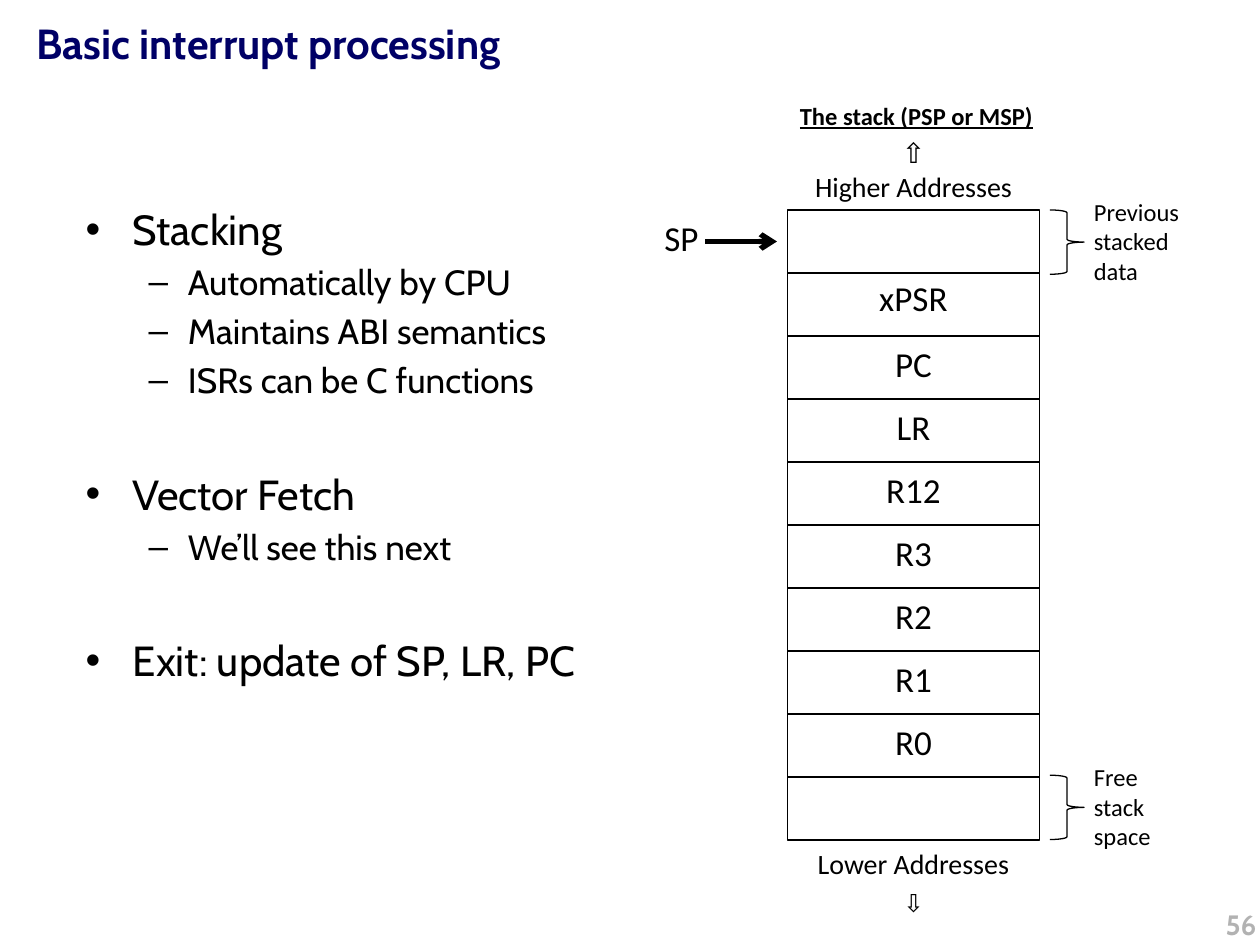
from lxml.etree import SubElement
from pptx import Presentation
from pptx.dml.color import RGBColor
from pptx.enum.shapes import MSO_CONNECTOR, MSO_SHAPE
from pptx.enum.text import MSO_ANCHOR, PP_ALIGN
from pptx.oxml.ns import qn
from pptx.util import Pt

BLACK = RGBColor(0x00, 0x00, 0x00)
WHITE = RGBColor(0xFF, 0xFF, 0xFF)
NAVY = RGBColor(0x00, 0x00, 0x66)
GREY = RGBColor(0xB2, 0xB2, 0xB2)

# Stack geometry, in points
STACK_LEFT, STACK_TOP = 450, 120
CELL_WIDTH, CELL_HEIGHT = 144, 36
STACK_CENTRE = STACK_LEFT + CELL_WIDTH / 2
REGISTERS = ["xPSR", "PC", "LR", "R12", "R3", "R2", "R1", "R0"]
CELL_COUNT = len(REGISTERS) + 2  # previous data above, free space below

# Bullet levels: character, left margin, hanging indent, size, space before
LEVELS = [("•", 27, -27, 24, 38.4), ("–", 58.5, -22.5, 20, 4)]
OUTLINE = [
    (0, "Stacking"),
    (1, "Automatically by CPU"),
    (1, "Maintains ABI semantics"),
    (1, "ISRs can be C functions"),
    (0, "Vector Fetch"),
    (1, "We’ll see this next"),
    (0, "Exit: update of SP, LR, PC"),
]


def format_font(font, color=BLACK, **values):
    for name, value in values.items():
        setattr(font, name, value)
    font.color.rgb = color


def add_text(slide, box, lines, size, name="Calibri", align=PP_ALIGN.LEFT,
             wrap=False, **font_values):
    shape = slide.shapes.add_textbox(*map(Pt, box))
    frame = shape.text_frame
    frame.word_wrap = wrap
    frame.text = "\n".join(lines)
    for paragraph in frame.paragraphs:
        paragraph.alignment = align
        format_font(paragraph.font, size=Pt(size), name=name, **font_values)
    return shape


def add_centred(slide, top, width, height, lines, size, **values):
    box = (STACK_CENTRE - width / 2, top, width, height)
    return add_text(slide, box, lines, size, align=PP_ALIGN.CENTER, **values)


def add_outlined(slide, kind, box):
    shape = slide.shapes.add_shape(kind, *map(Pt, box))
    shape.shadow.inherit = False
    shape.fill.solid()
    shape.fill.fore_color.rgb = WHITE
    shape.line.color.rgb = BLACK
    shape.line.width = Pt(0.75)
    return shape


def add_arrow(slide, start, end):
    connector = slide.shapes.add_connector(
        MSO_CONNECTOR.STRAIGHT, *map(Pt, start + end))
    connector.line.color.rgb = BLACK
    connector.line.width = Pt(3)
    SubElement(connector.line._get_or_add_ln(), qn("a:tailEnd"), type="arrow")
    SubElement(connector._element.spPr, qn("a:effectLst"))


def add_title(slide, text):
    title = slide.shapes.title
    box = {"left": 13.7, "top": 6.5, "width": 699, "height": 72}
    for name, value in box.items():
        setattr(title, name, Pt(value))
    frame = title.text_frame
    frame.text = text
    frame.vertical_anchor = MSO_ANCHOR.TOP
    paragraph = frame.paragraphs[0]
    paragraph.alignment = PP_ALIGN.LEFT
    format_font(paragraph.font, NAVY, size=Pt(24), name="Cabin", bold=True)


def add_outline(slide):
    frame = slide.shapes.add_textbox(*map(Pt, (41.8, 112.8, 330, 391))).text_frame
    frame.word_wrap = True
    frame.text = "\n".join(text for _, text in OUTLINE)
    for index, (paragraph, (level, _)) in enumerate(zip(frame.paragraphs, OUTLINE)):
        bullet, margin, indent, size, space = LEVELS[level]
        paragraph.level = level
        paragraph.space_before = Pt(space if index else 0)
        properties = paragraph._p.get_or_add_pPr()
        properties.set("marL", str(Pt(margin)))
        properties.set("indent", str(Pt(indent)))
        SubElement(properties, qn("a:buFont"), typeface="Arial")
        SubElement(properties, qn("a:buChar"), char=bullet)
        format_font(paragraph.font, size=Pt(size), name="Cabin")


def add_stack(slide):
    # Cells, then register names
    for row in range(CELL_COUNT):
        top = STACK_TOP + row * CELL_HEIGHT
        add_outlined(slide, MSO_SHAPE.RECTANGLE,
                     (STACK_LEFT, top, CELL_WIDTH, CELL_HEIGHT))
    for row, register in enumerate(REGISTERS, start=1):
        top = STACK_TOP + row * CELL_HEIGHT - (1.4 if row == 1 else 0)
        width = 14.4 + 10.5 * len(register)
        add_centred(slide, top, width, 31.5, [register], 20)

    # Stack pointer
    add_text(slide, (372.5, STACK_TOP, 34.5, 31.5), ["SP"], 20)
    pointer = STACK_TOP + CELL_HEIGHT / 2
    add_arrow(slide, (403, pointer), (444, pointer))

    # Braces with their notes
    notes = [(120, 64, ["Previous", "stacked", "data"]),
             (443, 47.5, ["Free", "stack", "space"])]
    for top, width, lines in notes:
        brace = add_outlined(slide, MSO_SHAPE.RIGHT_BRACE, (600, top, 19.5, 36.8))
        brace.adjustments[0] = 0.083
        add_text(slide, (618, top - 11, width, 58.3), lines, 14)

    # Heading and address directions
    add_text(slide, (450, 54, 149, 24.5), ["The stack (PSP or MSP)"], 14,
             bold=True, underline=True)
    higher = add_centred(slide, 74, 129, 46, ["⇧", "Higher Addresses"], 16)
    higher.text_frame.paragraphs[0].font.name = "Arial"
    add_centred(slide, 480, 125, 26.6, ["Lower Addresses"], 16)
    lower = add_centred(slide, 504, 26, 24.5, ["⇧"], 14, name="Arial")
    lower.rotation = 180


def main():
    presentation = Presentation()
    presentation.slide_width, presentation.slide_height = Pt(720), Pt(540)
    slide = presentation.slides.add_slide(presentation.slide_layouts[5])
    add_title(slide, "Basic interrupt processing")
    add_outline(slide)
    add_stack(slide)
    # Page number
    add_text(slide, (497, 515, 228, 36), ["56"], 16, name="Cabin", color=GREY,
             align=PP_ALIGN.RIGHT, wrap=True, bold=True)
    presentation.save("out.pptx")


if __name__ == "__main__":
    main()
